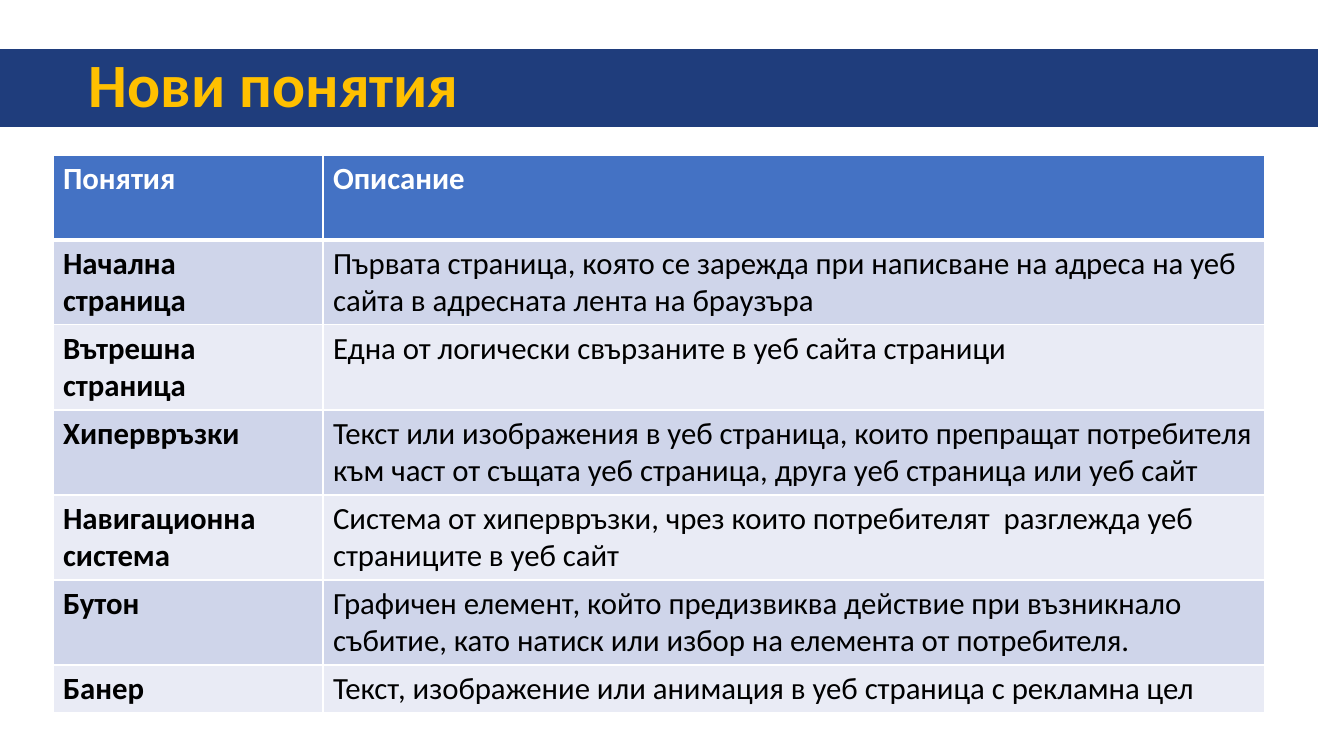
import lxml.etree
import pptx
import pptx.dml.color
import pptx.enum.shapes
import pptx.enum.text
import pptx.oxml.ns
import pptx.util

EMU_PER_PX = 914400 / 100.8
COLORS = {
    "band": "1F3D7C", "title": "FFC000", "header": "4472C4",
    "odd": "CFD5EA", "even": "E9EBF5", "white": "FFFFFF", "black": "000000",
}
HEADINGS = ("Понятия", "Описание")
CONCEPTS = [
    ("Начална\nстраница", "Първата страница, която се зарежда при написване на адреса на уеб сайта в адресната лента на браузъра"),
    ("Вътрешна\nстраница", "Една от логически свързаните в уеб сайта страници"),
    ("Хипервръзки", "Текст или изображения в уеб страница, които препращат потребителя към част от същата уеб страница, друга уеб страница или уеб сайт"),
    ("Навигационна\nсистема", "Система от хипервръзки, чрез които потребителят  разглежда уеб страниците в уеб сайт"),
    ("Бутон", "Графичен елемент, който предизвиква действие при възникнало събитие, като натиск или избор на елемента от потребителя."),
    ("Банер", "Текст, изображение или анимация в уеб страница с рекламна цел"),
]


def px(length):
    return pptx.util.Emu(round(length * EMU_PER_PX))


def rgb(name):
    return pptx.dml.color.RGBColor.from_string(COLORS[name])


def add_text(paragraph, text, size, color, bold):
    run = paragraph.add_run()
    run.text = text
    run.font.name = "Calibri"
    run.font.size = pptx.util.Pt(size)
    run.font.bold = bold
    run.font.color.rgb = rgb(color)


def set_borders(cell, widths):
    properties = cell._tc.get_or_add_tcPr()
    for side in "LRTB":
        line = lxml.etree.SubElement(properties, pptx.oxml.ns.qn(f"a:ln{side}"),
                                     w=str(pptx.util.Pt(widths.get(side, 1))))
        fill = lxml.etree.SubElement(line, pptx.oxml.ns.qn("a:solidFill"))
        lxml.etree.SubElement(fill, pptx.oxml.ns.qn("a:srgbClr"), val=COLORS["white"])


def add_title_band(slide, left, top, width, height):
    band = slide.shapes.add_shape(pptx.enum.shapes.MSO_SHAPE.RECTANGLE,
                                  px(left), px(top), px(width), px(height))
    band.shadow.inherit = False
    band.fill.solid()
    band.fill.fore_color.rgb = rgb("band")
    band.line.fill.background()
    frame = band.text_frame
    frame.word_wrap = True
    frame.vertical_anchor = pptx.enum.text.MSO_ANCHOR.MIDDLE
    frame.margin_left = px(89)
    title = frame.paragraphs[0]
    title.alignment = pptx.enum.text.PP_ALIGN.LEFT
    title.line_spacing = 0.9
    add_text(title, "Нови понятия", 44, "title", True)


def add_concept_table(slide, left, top, width, height):
    rows = [HEADINGS] + CONCEPTS
    table = slide.shapes.add_table(len(rows), 2, px(left), px(top), px(width), px(height)).table
    term_width, last_height = 270, 42
    table.columns[0].width = px(term_width)
    table.columns[1].width = px(width - term_width)
    row_height = (height - last_height) / (len(rows) - 1)

    for row_index, texts in enumerate(rows):
        is_header = row_index == 0
        is_last = row_index == len(rows) - 1
        table.rows[row_index].height = px(last_height if is_last else row_height)
        fill_name = "header" if is_header else "odd" if row_index % 2 else "even"
        for column, text in enumerate(texts):
            cell = table.cell(row_index, column)
            # The rule under the header row is thicker
            set_borders(cell, {"B": 3} if is_header else {"T": 3} if row_index == 1 else {})
            cell.fill.solid()
            cell.fill.fore_color.rgb = rgb(fill_name)
            frame = cell.text_frame
            for line_index, line in enumerate(text.split("\n")):
                paragraph = frame.add_paragraph() if line_index else frame.paragraphs[0]
                add_text(paragraph, line, 22, "white" if is_header else "black",
                         is_header or column == 0)


def main():
    deck = pptx.Presentation()
    deck.slide_width, deck.slide_height = px(1344), px(756)
    slide = deck.slides.add_slide(deck.slide_layouts[6])
    add_title_band(slide, 0, 49, 1318, 78)
    add_concept_table(slide, 53, 155, 1212, 551)
    deck.save("out.pptx")


if __name__ == "__main__":
    main()
